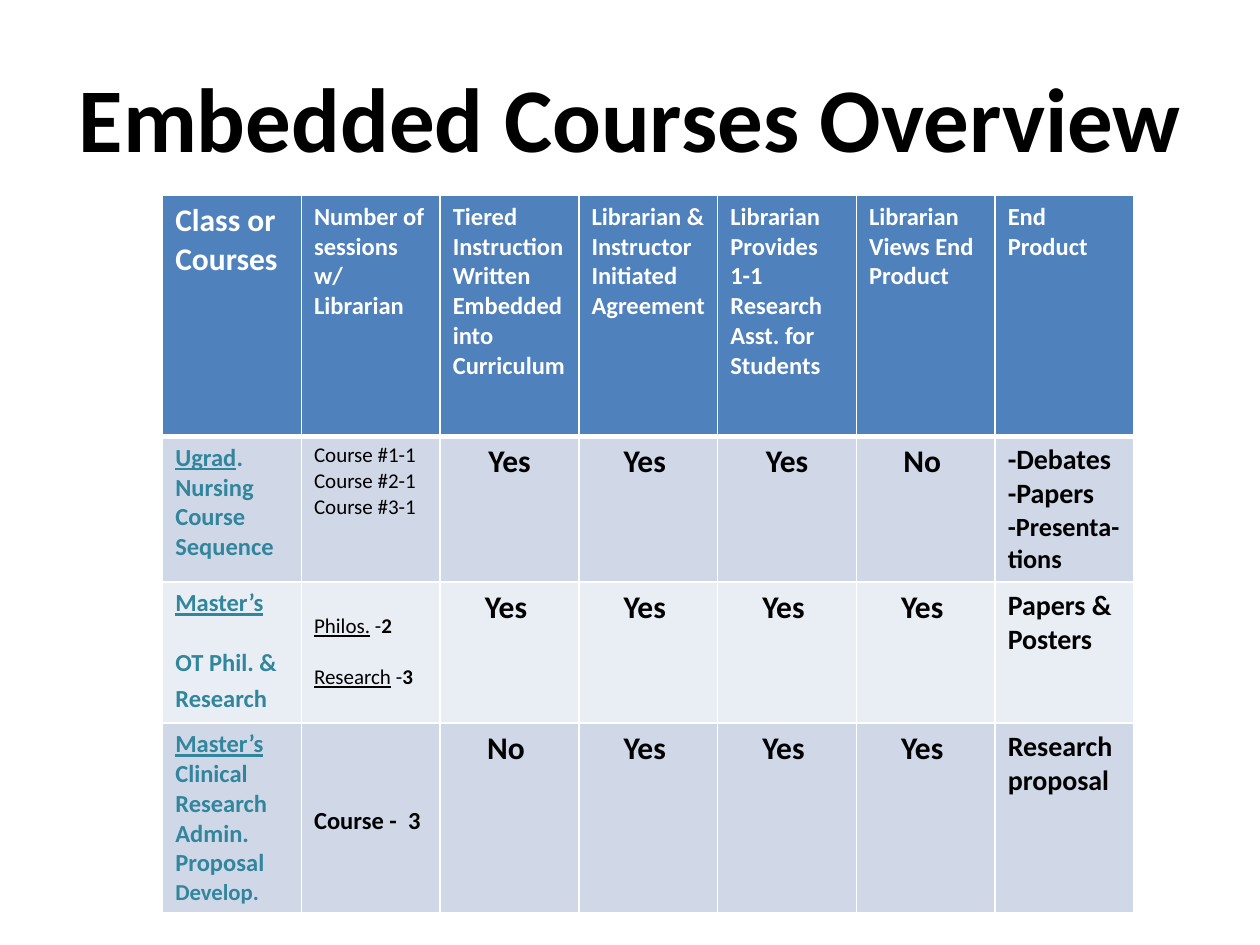
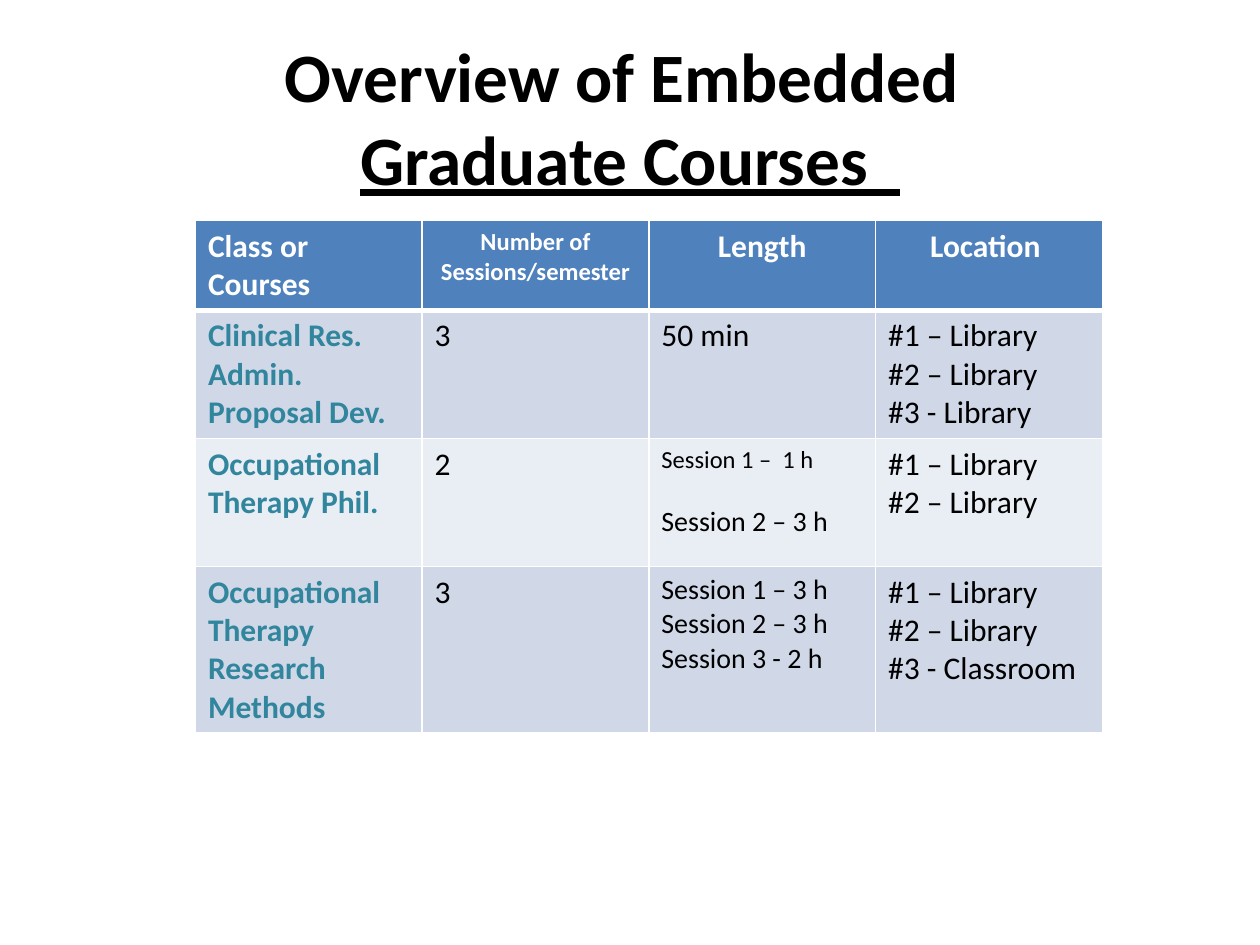
import pptx
import pptx.dml.color
import pptx.enum.text
import pptx.util
import lxml.etree
from pptx.oxml.ns import qn

Cm = pptx.util.Cm
Pt = pptx.util.Pt
CENTER = pptx.enum.text.PP_ALIGN.CENTER
LEFT = pptx.enum.text.PP_ALIGN.LEFT

FONT = "Calibri"
BLACK = "000000"
WHITE = "FFFFFF"
TEAL = "31859C"
HEADER_BLUE = "4F81BD"
BANDS = ("D0D8E8", "E9EDF4")
TITLE_BOX = (1.27, 0.76, 22.86, 3.18)
UNDERLINED = {"underline": True}


def colour(hex_code):
    return pptx.dml.color.RGBColor.from_string(hex_code)


def style_run(run, size, hex_code=BLACK, bold=False, underline=False):
    run.font.name = FONT
    run.font.size = Pt(size)
    run.font.color.rgb = colour(hex_code)
    run.font.bold = bold
    run.font.underline = underline


def entry(*lines, size=18, hex_code=BLACK, bold=False, align=LEFT, gap=0, top=0.13):
    return dict(lines=lines, size=size, hex_code=hex_code, bold=bold,
                align=align, gap=gap, top=top)


def heading(*lines, size=14, align=LEFT):
    return entry(*lines, size=size, hex_code=WHITE, bold=True, align=align)


def course(*lines, size=14, gap=0):
    return entry(*lines, size=size, hex_code=TEAL, bold=True, gap=gap)


def answers(*words):
    return [entry(word, bold=True, align=CENTER) for word in words]


def product(*lines):
    return entry(*lines, size=16, bold=True)


def add_border(cell, side, width):
    line = lxml.etree.SubElement(cell._tc.get_or_add_tcPr(), qn(f"a:ln{side}"),
                                 w=str(Pt(width)))
    fill = lxml.etree.SubElement(line, qn("a:solidFill"))
    lxml.etree.SubElement(fill, qn("a:srgbClr"), val=WHITE)


def fill_cell(cell, content, row):
    widths = {"L": 1, "R": 1, "T": 3 if row == 1 else 1, "B": 3 if row == 0 else 1}
    for side, width in widths.items():
        add_border(cell, side, width)
    cell.fill.solid()
    cell.fill.fore_color.rgb = colour(BANDS[(row - 1) % 2] if row else HEADER_BLUE)
    cell.margin_top = Cm(content["top"])
    for index, line in enumerate(content["lines"]):
        frame = cell.text_frame
        paragraph = frame.add_paragraph() if index else frame.paragraphs[0]
        paragraph.alignment = content["align"]
        if index and content["gap"]:
            paragraph.space_before = Pt(content["gap"])
        for text, changes in [(line, {})] if isinstance(line, str) else line:
            run = paragraph.add_run()
            run.text = text
            base = {key: content[key] for key in ("size", "hex_code", "bold")}
            style_run(run, **{**base, **changes})


def add_course_table(slide, box, row_heights, rows):
    left, top, width = box
    columns = len(rows[0])
    table = slide.shapes.add_table(len(rows), columns, Cm(left), Cm(top),
                                   Cm(width), Cm(sum(row_heights))).table
    table.first_row = False
    table.horz_banding = False
    for column in table.columns:
        column.width = Cm(width / columns)
    for row, (height, contents) in enumerate(zip(row_heights, rows)):
        table.rows[row].height = Cm(height)
        for column, content in enumerate(contents):
            fill_cell(table.cell(row, column), content, row)


def add_titled_slide(deck, title, size):
    slide = deck.slides.add_slide(deck.slide_layouts[5])
    heading_box = slide.shapes.title
    left, top, width, height = (Cm(length) for length in TITLE_BOX)
    heading_box.left, heading_box.top = left, top
    heading_box.width, heading_box.height = width, height
    frame = heading_box.text_frame
    frame.text = title
    frame.word_wrap = True
    frame.auto_size = pptx.enum.text.MSO_AUTO_SIZE.NONE
    frame.vertical_anchor = pptx.enum.text.MSO_ANCHOR.MIDDLE
    frame.paragraphs[0].alignment = CENTER
    for run in frame.paragraphs[0].runs:
        style_run(run, size, bold=True)
    return slide


def build_courses_overview(deck):
    slide = add_titled_slide(deck, "Embedded Courses Overview ", 52)
    rows = [
        [heading("Class or", "Courses", size=18),
         heading("Number of sessions w/", "Librarian"),
         heading("Tiered Instruction Written", "Embedded into", "Curriculum"),
         heading("Librarian & Instructor", "Initiated", "Agreement"),
         heading("Librarian  Provides", "1-1 Research Asst. for Students"),
         heading("Librarian Views End Product"),
         heading("End Product")],
        [course([("Ugrad", UNDERLINED), (".", {})], "Nursing Course Sequence"),
         entry("Course #1-1", "Course #2-1", "Course #3-1", size=12),
         *answers("Yes", "Yes ", "Yes", "No "),
         product("-Debates", "-Papers", [("-Presenta-", {"size": 15})],
                 [("tions", {"size": 15})])],
        [course([("Master’s", UNDERLINED), (" ", {})],
                [("OT Phil. & Research", {}), (" ", {"size": 18})], gap=17),
         entry([("Philos.", UNDERLINED), (" -", {}), ("2", {"bold": True})],
               [("Research", UNDERLINED), (" -", {}), ("3", {"bold": True})],
               size=12, gap=14.6, top=0.64),
         *answers("Yes ", "Yes ", "Yes ", "Yes "),
         product("Papers &", "Posters")],
        [course([("Master’s", UNDERLINED), (" Clinical Research Admin. Proposal ", {}),
                 ("Develop.", {"size": 13})]),
         entry("Course -  3", size=14, bold=True, top=1.68),
         *answers("No ", "Yes ", "Yes ", "Yes "),
         product("Research proposal")],
    ]
    add_course_table(slide, (3.28, 3.94, 19.58), (4.86, 2.92, 2.84, 3.8), rows)


def build_graduate_overview(deck):
    slide = add_titled_slide(deck, "Overview of Embedded \vGraduate Courses  ", 39.6)
    slide.shapes.title.text_frame.paragraphs[0].runs[-1].font.underline = True
    rows = [
        [heading("Class or", "Courses", size=18),
         heading("Number of Sessions/semester", align=CENTER),
         heading("Length", size=18, align=CENTER),
         heading("Location ", size=18, align=CENTER)],
        [course("Clinical Res.  Admin. Proposal Dev.", size=18),
         entry("3"),
         entry("50 min"),
         entry("#1 – Library", "#2 – Library", "#3 - Library")],
        [course("Occupational", "Therapy Phil.", size=18),
         entry("2"),
         entry([("Session 1 –  1 h", {"size": 14})], "Session 2 – 3 h", size=16, gap=17),
         entry("#1 – Library", "#2 – Library")],
        [course("Occupational", "Therapy Research", "Methods", size=18),
         entry("3"),
         entry("Session 1 – 3 h", "Session 2 – 3 h", "Session 3 - 2 h", size=16),
         entry("#1 – Library", "#2 – Library", "#3 - Classroom")],
    ]
    add_course_table(slide, (3.94, 4.45, 18.28), (1.8, 2.58, 2.58, 3.35), rows)


def main():
    deck = pptx.Presentation()
    deck.slide_width = Cm(25.4)
    deck.slide_height = Cm(19.05)
    build_courses_overview(deck)
    build_graduate_overview(deck)
    deck.save("out.pptx")


if __name__ == "__main__":
    main()
